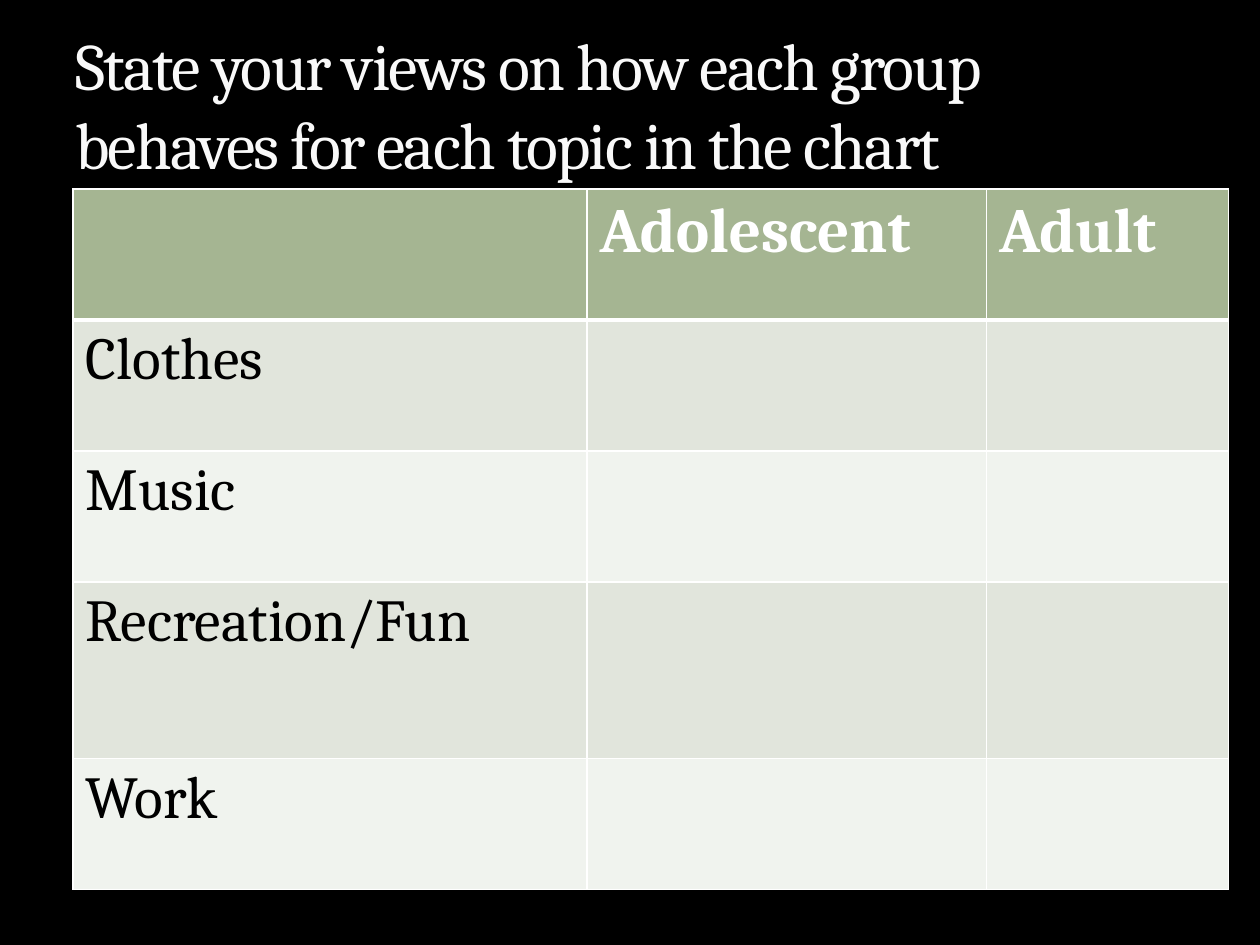
from dataclasses import dataclass

from lxml import etree
from pptx import Presentation
from pptx.dml.color import RGBColor
from pptx.enum.text import MSO_ANCHOR
from pptx.oxml.ns import qn
from pptx.util import Inches, Pt

BOTTOM = MSO_ANCHOR.BOTTOM
FONT = "Cambria"
WHITE = "FFFFFF"
BLACK = "000000"
COLUMN_WIDTHS = (4.08, 3.17, 1.92)
THIN, THICK = 1, 3


@dataclass(frozen=True)
class RowStyle:
    fill: str
    color: str
    size: float
    bold: bool
    top: int
    bottom: int


@dataclass(frozen=True)
class TableRow:
    texts: tuple[str, ...]
    height: float
    style: RowStyle


HEADER = RowStyle("A5B592", WHITE, 36, True, THIN, THICK)
FIRST = RowStyle("E1E5DC", BLACK, 34, False, THICK, THIN)
DARK = RowStyle("E1E5DC", BLACK, 34, False, THIN, THIN)
LIGHT = RowStyle("F0F3EE", BLACK, 34, False, THIN, THIN)

ROWS = (
    TableRow(("", "Adolescent", "Adult"), 1.04, HEADER),
    TableRow(("Clothes", "", ""), 1.04, FIRST),
    TableRow(("Music", "", ""), 1.04, LIGHT),
    TableRow(("Recreation/Fun", "", ""), 1.4, DARK),
    TableRow(("Work", "", ""), 1.04, LIGHT),
)


def rgb(value: str) -> RGBColor:
    return RGBColor.from_string(value)


def add_line(parent, tag: str, width: float, color: str, alpha: int = 100):
    line = etree.SubElement(parent, qn(tag), w=str(Pt(width)))
    fill = etree.SubElement(line, qn("a:solidFill"))
    shade = etree.SubElement(fill, qn("a:srgbClr"), val=color)
    if alpha < 100:
        etree.SubElement(shade, qn("a:alpha"), val=str(alpha * 1000))
    return line


def format_span(span, size: float, color: str, bold: bool = False) -> None:
    span.font.name = FONT
    span.font.size = Pt(size)
    span.font.bold = bold
    span.font.color.rgb = rgb(color)


def add_title(page, text: str) -> None:
    box = page.shapes.add_textbox(Inches(0.5), Inches(0.17), Inches(9), Inches(1.33))
    frame = box.text_frame
    frame.word_wrap = True
    frame.vertical_anchor = BOTTOM
    frame.text = text
    span = frame.paragraphs[0].runs[0]
    format_span(span, 37.8, "F9F9F9")
    properties = span.font._element
    properties.set("spc", "-100")
    properties.insert(0, add_line(properties, "a:ln", 0.25, "3C4422", 25))


def fill_cell(cell, text: str, style: RowStyle) -> None:
    properties = cell._tc.get_or_add_tcPr()
    borders = {"L": THIN, "R": THIN, "T": style.top, "B": style.bottom}
    for side, width in borders.items():
        add_line(properties, f"a:ln{side}", width, WHITE)
    cell.fill.solid()
    cell.fill.fore_color.rgb = rgb(style.fill)
    cell.text_frame.text = text
    for span in cell.text_frame.paragraphs[0].runs:
        format_span(span, style.size, style.color, style.bold)


def add_topic_table(page, rows: tuple[TableRow, ...]) -> None:
    width = Inches(sum(COLUMN_WIDTHS))
    height = Inches(sum(row.height for row in rows))
    table = page.shapes.add_table(
        len(rows), len(COLUMN_WIDTHS), Inches(0.58), Inches(1.5), width, height
    ).table
    for column, column_width in zip(table.columns, COLUMN_WIDTHS):
        column.width = Inches(column_width)
    for table_row, row in zip(table.rows, rows):
        table_row.height = Inches(row.height)
        for cell, text in zip(table_row.cells, row.texts):
            fill_cell(cell, text, row.style)


def main() -> None:
    deck = Presentation()
    deck.slide_width, deck.slide_height = Inches(10), Inches(7.5)
    page = deck.slides.add_slide(deck.slide_layouts[6])
    page.background.fill.solid()
    page.background.fill.fore_color.rgb = rgb(BLACK)
    add_topic_table(page, ROWS)
    add_title(page, "State your views on how each group behaves for each topic in the chart")
    deck.save("out.pptx")


if __name__ == "__main__":
    main()
